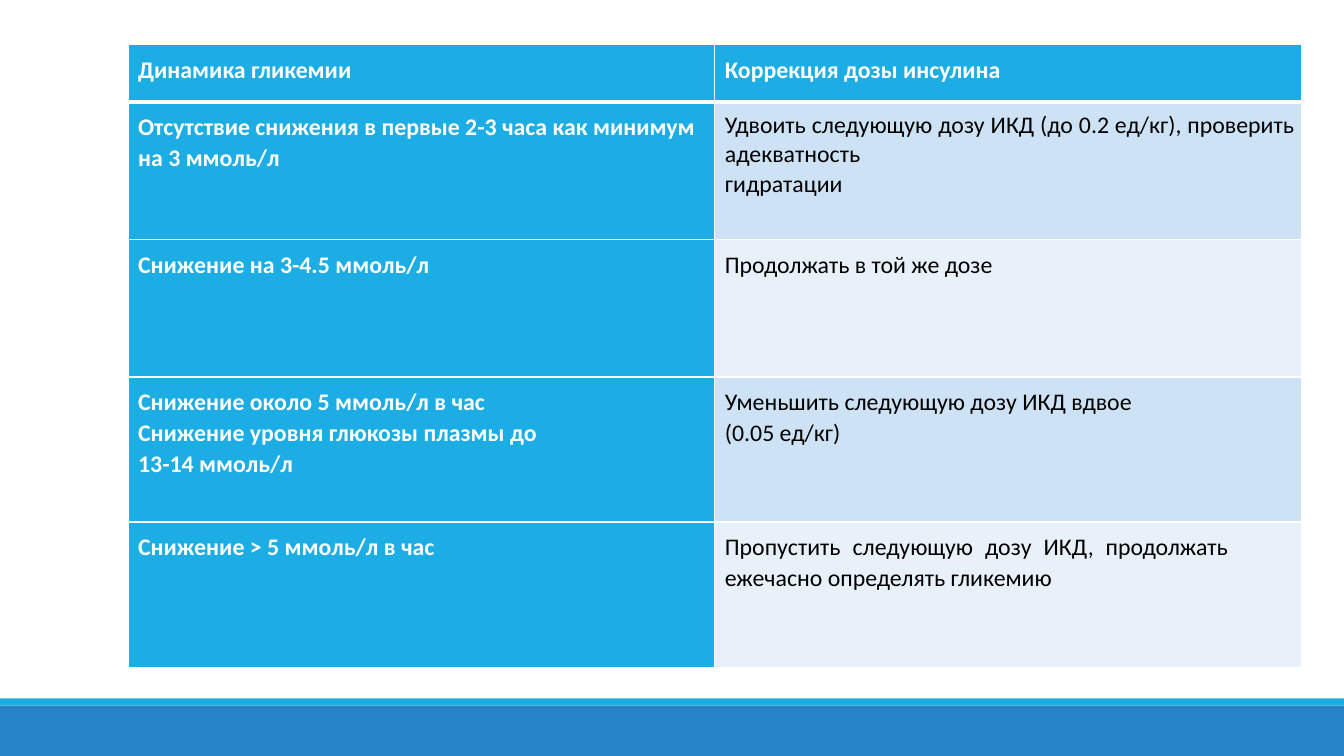
from lxml import etree
from pptx import Presentation, util as u
from pptx.dml.color import RGBColor
from pptx.enum import shapes, text
from pptx.oxml import ns

# Content: each cell is a list of paragraphs
HEADER = (["Динамика гликемии"], ["Коррекция дозы инсулина"])
RULES = [
    (["Отсутствие снижения в первые 2-3 часа как минимум на 3 ммоль/л"],
     ["Удвоить следующую дозу ИКД (до 0.2 ед/кг), проверить адекватность", "гидратации"]),
    (["Снижение на 3-4.5 ммоль/л"], ["Продолжать в той же дозе"]),
    (["Снижение около 5 ммоль/л в час", "Снижение уровня глюкозы плазмы до", "13-14 ммоль/л"],
     ["Уменьшить следующую дозу ИКД вдвое", "(0.05 ед/кг)"]),
    (["Снижение > 5 ммоль/л в час"],
     ["Пропустить следующую дозу ИКД, продолжать ежечасно определять гликемию"]),
]
ROWS = [HEADER] + RULES
JUSTIFIED = {(1, 1), (3, 1), (4, 1)}  # first paragraph of these cells
LINE_SPACING = 1.07
TIGHT = {(1, 1): 0.98}  # first-paragraph line spacing
RIGHT_INDENT = {(4, 1): 0.66}

# Layout in inches
WIDTH, HEIGHT = 13.33, 7.5
TABLE_LEFT, TABLE_TOP, COLUMN = 1.27, 0.44, 5.82
ROW_HEIGHTS = [0.57, 1.37, 1.36, 1.44, 1.44]
FOOTER, STRIPE = 0.5, 0.07

WHITE = RGBColor(0xFF, 0xFF, 0xFF)
BLACK = RGBColor(0, 0, 0)
CYAN = RGBColor(0x1C, 0xAD, 0xE4)
BLUE = RGBColor(0x26, 0x83, 0xC6)
BANDS = [RGBColor(0xE8, 0xF1, 0xFA), RGBColor(0xCD, 0xE3, 0xF5)]


def add_band(page, top, height, color):
    band = page.shapes.add_shape(shapes.MSO_SHAPE.RECTANGLE, 0, u.Inches(top),
                                 u.Inches(WIDTH), u.Inches(height))
    band.shadow.inherit = False
    band.fill.solid()
    band.fill.fore_color.rgb = color
    band.line.fill.background()


def add_borders(cell, widths):
    properties = cell._tc.get_or_add_tcPr()
    for side, points in widths.items():
        line = etree.SubElement(properties, ns.qn("a:ln" + side), w=str(u.Pt(points)))
        fill = etree.SubElement(line, ns.qn("a:solidFill"))
        etree.SubElement(fill, ns.qn("a:srgbClr"), val=str(WHITE))


def fill_cell(cell, row, column, lines):
    strong = row == 0 or column == 0
    add_borders(cell, {"L": 1, "R": 1, "T": 3 if row == 1 else 1, "B": 3 if row == 0 else 1})
    cell.fill.solid()
    cell.fill.fore_color.rgb = CYAN if strong else BANDS[row % 2]
    cell.margin_left, cell.margin_top = u.Inches(0.1), u.Inches(0.09)
    cell.margin_right, cell.margin_bottom = u.Inches(0.07), 0
    cell.text_frame.text = "\n".join(lines)
    for para in cell.text_frame.paragraphs:
        para.line_spacing = LINE_SPACING
        font = para.runs[0].font
        font.name, font.size, font.bold = "Calibri", u.Pt(17), strong
        font.color.rgb = WHITE if strong else BLACK
    first = cell.text_frame.paragraphs[0]
    first.line_spacing = TIGHT.get((row, column), LINE_SPACING)
    if (row, column) in JUSTIFIED:
        first.alignment = text.PP_ALIGN.JUSTIFY
    if (row, column) in RIGHT_INDENT:
        first._p.get_or_add_pPr().set("marR", str(u.Inches(RIGHT_INDENT[row, column])))


def main():
    deck = Presentation()
    deck.slide_width, deck.slide_height = u.Inches(WIDTH), u.Inches(HEIGHT)
    page = deck.slides.add_slide(deck.slide_layouts[6])

    # Footer bands
    add_band(page, HEIGHT - FOOTER, FOOTER, BLUE)
    add_band(page, HEIGHT - FOOTER - STRIPE, STRIPE, CYAN)

    # Dose correction table
    table = page.shapes.add_table(
        len(ROWS), len(HEADER), u.Inches(TABLE_LEFT), u.Inches(TABLE_TOP),
        u.Inches(COLUMN * len(HEADER)), u.Inches(sum(ROW_HEIGHTS))).table
    for column in table.columns:
        column.width = u.Inches(COLUMN)
    for row, cells in enumerate(ROWS):
        table.rows[row].height = u.Inches(ROW_HEIGHTS[row])
        for column, lines in enumerate(cells):
            fill_cell(table.cell(row, column), row, column, lines)

    deck.save("out.pptx")


if __name__ == "__main__":
    main()
